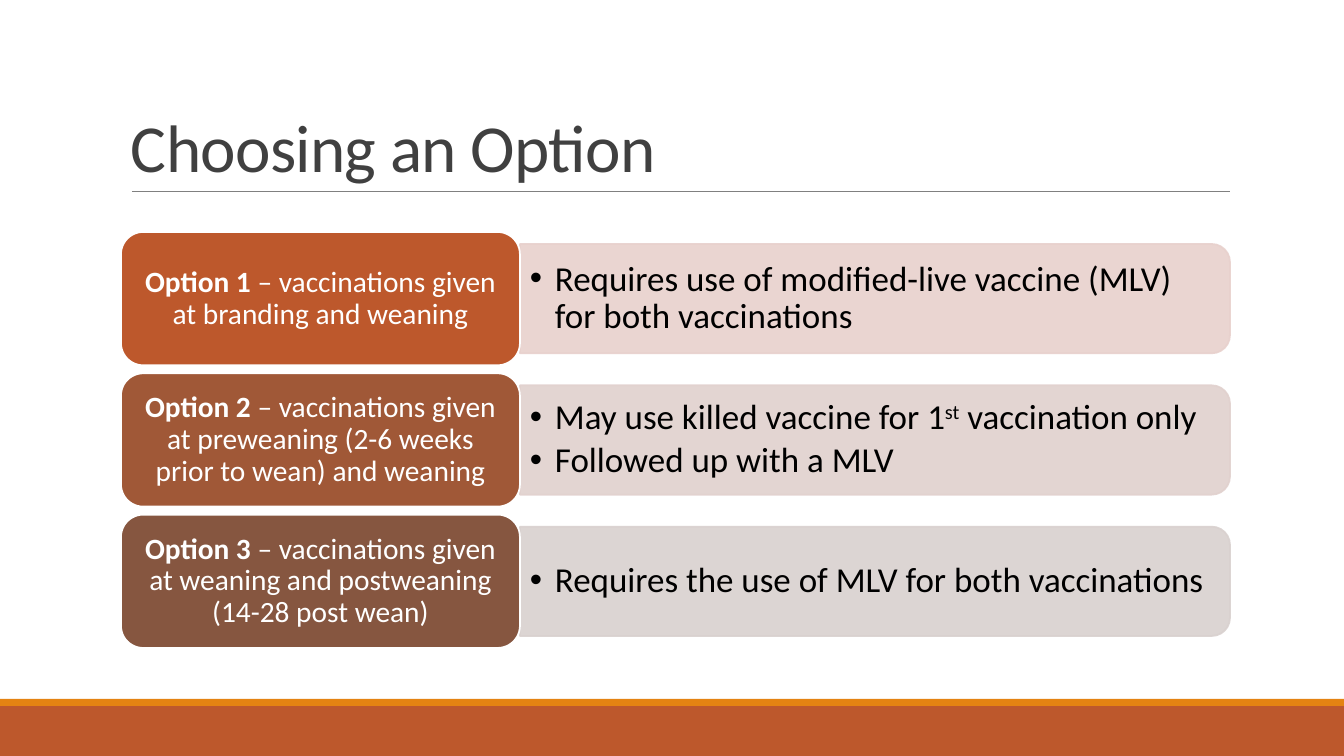
import pptx
import pptx.util
import pptx.dml.color
import pptx.enum.shapes
import pptx.enum.text
import pptx.oxml.ns
from lxml import etree

RGBColor = pptx.dml.color.RGBColor
Shape = pptx.enum.shapes.MSO_SHAPE
Align = pptx.enum.text.PP_ALIGN
Anchor = pptx.enum.text.MSO_ANCHOR
qn = pptx.oxml.ns.qn

EMU_PER_PX = 914400 / 100.8
FONT = "Calibri"
WHITE = RGBColor(0xFF, 0xFF, 0xFF)
BLACK = RGBColor(0x00, 0x00, 0x00)
TITLE_GRAY = RGBColor(0x40, 0x40, 0x40)
RULE_GRAY = RGBColor(0x80, 0x80, 0x80)
RUST = RGBColor(0xBD, 0x58, 0x2C)
ORANGE = RGBColor(0xE4, 0x83, 0x12)
SIENNA = RGBColor(0xA0, 0x58, 0x37)
BROWN = RGBColor(0x86, 0x56, 0x40)
PINK_TINT = RGBColor(0xE8, 0xD1, 0xCD)
ROSE_TINT = RGBColor(0xE1, 0xD1, 0xCE)
GRAY_TINT = RGBColor(0xD9, 0xD1, 0xCF)

# Label name, label detail, label colour, panel colour, bullets as (text, superscript) spans
OPTIONS = [
    ("Option 1", " – vaccinations given at branding and weaning", RUST, PINK_TINT,
     [[("Requires use of modified-live vaccine (MLV) for both vaccinations", False)]]),
    ("Option 2", " – vaccinations given at preweaning (2-6 weeks prior to wean) and weaning",
     SIENNA, ROSE_TINT,
     [[("May use killed vaccine for 1", False), ("st", True), (" vaccination only", False)],
      [("Followed up with a MLV", False)]]),
    ("Option 3", " – vaccinations given at weaning and postweaning (14-28 post wean)",
     BROWN, GRAY_TINT,
     [[("Requires the use of MLV for both vaccinations", False)]]),
]


def px(length):
    return pptx.util.Emu(round(length * EMU_PER_PX))


def place(item, left, top, width, height):
    item.left, item.top, item.width, item.height = map(px, (left, top, width, height))


def add_block(page, kind, box, fill, line=None):
    block = page.shapes.add_shape(kind, *map(px, box))
    block.shadow.inherit = False
    block.fill.solid()
    block.fill.fore_color.rgb = fill
    if line is None:
        block.line.fill.background()
    else:
        block.line.color.rgb = line
        block.line.width = pptx.util.Pt(1.25)
    return block


def set_frame(frame, anchor, side, end):
    frame.word_wrap = True
    frame.auto_size = pptx.enum.text.MSO_AUTO_SIZE.NONE
    frame.vertical_anchor = anchor
    frame.margin_left = frame.margin_right = px(side)
    frame.margin_top = frame.margin_bottom = px(end)


def set_para(para, size, color, align, spacing, after=0):
    para.font.name = FONT
    para.font.size = pptx.util.Pt(size)
    para.font.color.rgb = color
    para.alignment = align
    para.line_spacing = spacing
    para.space_before = pptx.util.Pt(0)
    para.space_after = pptx.util.Pt(after)


def add_footer(page, left, top, width, height):
    stripe = 7
    add_block(page, Shape.RECTANGLE, (left, top + stripe, width, height - stripe), RUST)
    add_block(page, Shape.RECTANGLE, (left, top, width, stripe), ORANGE)


def add_title(page, left, top, width, height):
    title = page.shapes.title
    place(title, left, top, width, height)
    set_frame(title.text_frame, Anchor.BOTTOM, 10, 5)
    para = title.text_frame.paragraphs[0]
    set_para(para, 48, TITLE_GRAY, Align.LEFT, 0.85)
    span = para.add_run()
    span.text = "Choosing an Option"
    span.font._element.set("spc", "-50")

    # Rule under the title
    bottom = top + height
    rule = page.shapes.add_connector(
        pptx.enum.shapes.MSO_CONNECTOR.STRAIGHT,
        px(left + 11), px(bottom), px(left + width), px(bottom))
    rule.line.color.rgb = RULE_GRAY
    rule.line.width = pptx.util.Pt(0.5)
    etree.SubElement(rule._element.spPr, qn("a:effectLst"))


def add_panel(page, left, top, width, height, tint):
    # A quarter turn puts the two rounded corners on the right
    shift = (width - height) / 2
    panel = add_block(page, Shape.ROUND_2_SAME_RECTANGLE,
                      (left + shift, top - shift, height, width), tint, tint)
    panel.rotation = 90
    for color in panel._element.spPr.iter(qn("a:srgbClr")):
        etree.SubElement(color, qn("a:alpha")).set("val", "90000")


def add_bullets(page, body, left, top, width, height, bullets):
    place(body, left, top, width, height)
    page.shapes._spTree.append(body._element)  # bring in front of its panel
    frame = body.text_frame
    set_frame(frame, Anchor.MIDDLE, 10, 5)
    for number, spans in enumerate(bullets):
        para = frame.add_paragraph() if number else frame.paragraphs[0]
        set_para(para, 25, BLACK, Align.LEFT, 0.9, after=3.75)
        para.font.bold = False
        props = para._p.get_or_add_pPr()
        props.set("marL", str(px(25)))
        props.set("indent", str(px(-25)))
        bullet = etree.Element(qn("a:buChar"), char="•")
        props.find(qn("a:defRPr")).addprevious(bullet)
        for text, raised in spans:
            span = para.add_run()
            span.text = text
            if raised:
                span.font._element.set("baseline", "30000")


def add_label(page, left, top, width, height, name, detail, fill):
    label = add_block(page, Shape.ROUNDED_RECTANGLE, (left, top, width, height), fill, WHITE)
    set_frame(label.text_frame, Anchor.MIDDLE, 9, 4)
    para = label.text_frame.paragraphs[0]
    set_para(para, 21, WHITE, Align.CENTER, 0.9)
    for text, bold in ((name, True), (detail, False)):
        span = para.add_run()
        span.text = text
        span.font.bold = bold


def add_option(page, body, left, top, width, height, option):
    name, detail, fill, tint, bullets = option
    label_width, inset = 399, 12
    panel_left = left + label_width
    panel_width = width - label_width
    add_panel(page, panel_left, top + inset, panel_width, height - 2 * inset, tint)
    add_bullets(page, body, panel_left, top + 18, panel_width - 5, height - 36, bullets)
    add_label(page, left, top, label_width, height, name, detail, fill)


def add_options(page, left, top, width, height):
    gap = 8
    row_height = (height - gap * (len(OPTIONS) - 1)) / len(OPTIONS)
    bodies = list(page.placeholders)[1:]
    for row, (body, option) in enumerate(zip(bodies, OPTIONS)):
        add_option(page, body, left, top + row * (row_height + gap), width, row_height, option)
    for unused in bodies[len(OPTIONS):]:
        page.shapes._spTree.remove(unused._element)


def main():
    deck = pptx.Presentation()
    deck.slide_width, deck.slide_height = px(1344), px(756)
    page = deck.slides.add_slide(deck.slide_layouts.get_by_name("Comparison"))
    add_footer(page, 0, 699, 1344, 57)
    add_title(page, 121, 31, 1109, 160)
    add_options(page, 121, 232, 1109, 416)
    deck.save("out.pptx")


if __name__ == "__main__":
    main()
